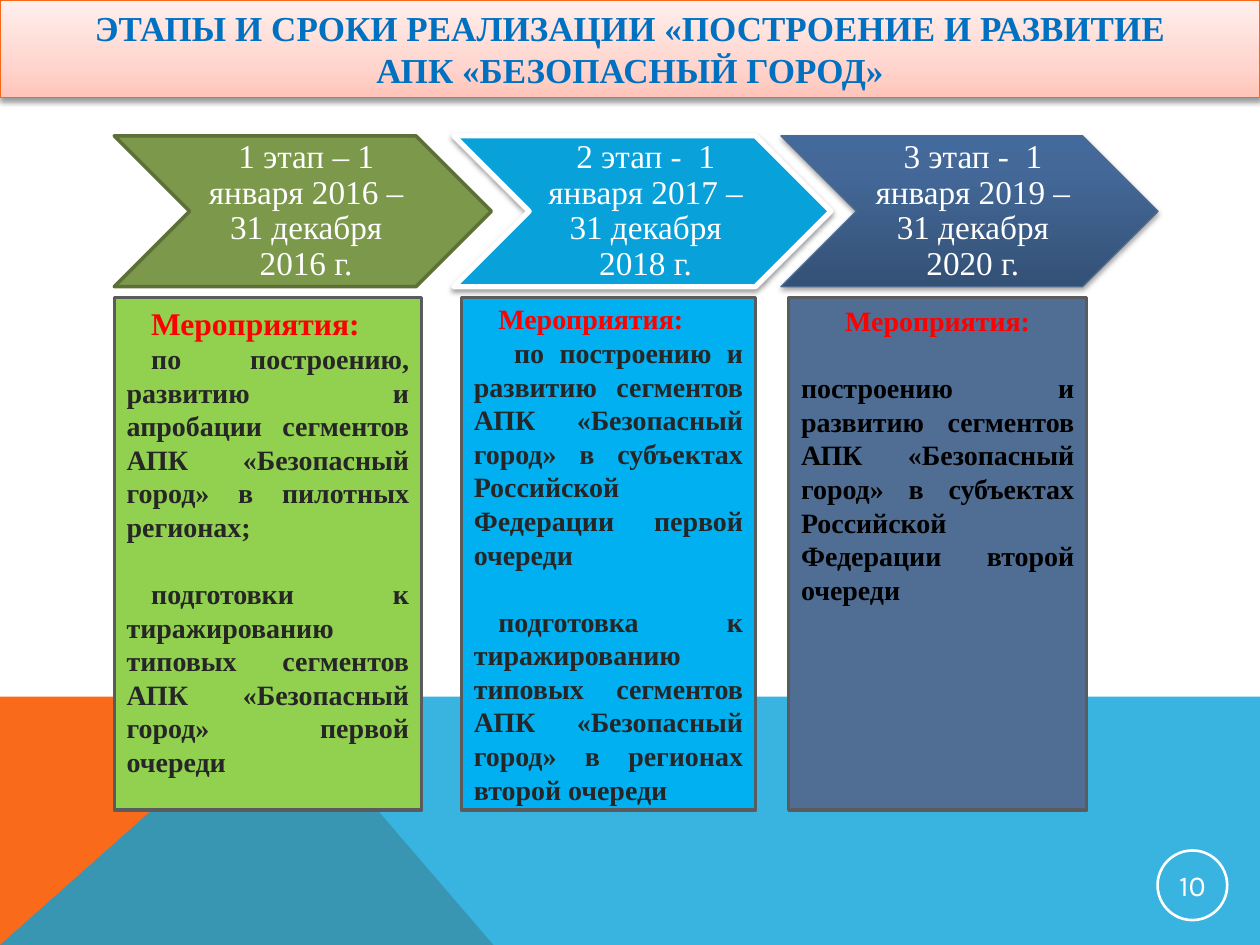
from lxml.etree import SubElement
from pptx import Presentation
from pptx.dml.color import RGBColor
from pptx.enum.shapes import MSO_SHAPE
from pptx.enum.text import MSO_ANCHOR, MSO_AUTO_SIZE, PP_ALIGN
from pptx.oxml.ns import qn
from pptx.util import Pt

SERIF = "Times New Roman"
WIDTH, HEIGHT = 720, 540
BLANK_LINE = 19.2
RED, DARK = "FF0000", "262626"


def color(value):
    return RGBColor.from_string(value)


def add_paragraph(frame, text, size=16, tone="FFFFFF", bold=False, font=SERIF,
                  align=PP_ALIGN.CENTER, indent=0, before=0, line_spacing=None):
    first = not frame.paragraphs[0].runs
    paragraph = frame.paragraphs[0] if first else frame.add_paragraph()
    paragraph.alignment = align
    if line_spacing:
        paragraph.line_spacing = line_spacing
    if before:
        paragraph.space_before = Pt(before)
    if indent:
        properties = paragraph._p.get_or_add_pPr()
        properties.set("marL", "0")
        properties.set("indent", str(Pt(indent)))
    run = paragraph.add_run()
    run.text = text
    run.font.name = font
    run.font.size = Pt(size)
    run.font.bold = bold
    run.font.color.rgb = color(tone)


class SlideBuilder:
    def __init__(self, slide):
        self.slide = slide

    def style(self, shape, fill=None, line=None, line_width=1, shadow=None, alpha=None):
        shape.shadow.inherit = False
        if isinstance(fill, list):
            self.gradient(shape, fill)
        elif fill:
            shape.fill.solid()
            shape.fill.fore_color.rgb = color(fill)
        else:
            shape.fill.background()
        if alpha:
            tone = shape._element.spPr.find(qn("a:solidFill"))[0]
            SubElement(tone, qn("a:alpha"), val=str(alpha * 1000))
        if line:
            shape.line.color.rgb = color(line)
            shape.line.width = Pt(line_width)
        else:
            shape.line.fill.background()
        if shadow:
            effects = shape._element.spPr.find(qn("a:effectLst"))
            outer = SubElement(effects, qn("a:outerShdw"), blurRad=str(Pt(3.1)),
                               dist=str(Pt(1.7)), dir="5400000", rotWithShape="0")
            tone = SubElement(outer, qn("a:srgbClr"), val="000000")
            SubElement(tone, qn("a:alpha"), val=str(shadow * 1000))

    def gradient(self, shape, stops):
        shape.fill.gradient()
        shape.fill.gradient_angle = 90
        stop_list = shape._element.spPr.find(qn("a:gradFill")).find(qn("a:gsLst"))
        for stop in list(stop_list):
            stop_list.remove(stop)
        for position, value in stops:
            stop = SubElement(stop_list, qn("a:gs"), pos=str(position * 1000))
            SubElement(stop, qn("a:srgbClr"), val=value)

    def polygon(self, points, **style):
        builder = self.slide.shapes.build_freeform(*points[0], scale=Pt(1))
        builder.add_line_segments(points[1:], close=True)
        self.style(builder.convert_to_shape(), **style)

    def shape(self, kind, left, top, width, height, anchor=MSO_ANCHOR.TOP, **style):
        shape = self.slide.shapes.add_shape(kind, Pt(left), Pt(top), Pt(width), Pt(height))
        self.style(shape, **style)
        shape.text_frame.vertical_anchor = anchor
        return shape.text_frame

    def text_box(self, left, top, width, height):
        frame = self.slide.shapes.add_textbox(Pt(left), Pt(top), Pt(width), Pt(height)).text_frame
        frame.word_wrap = True
        frame.vertical_anchor = MSO_ANCHOR.MIDDLE
        frame.margin_left = Pt(5.7)
        frame.margin_top = frame.margin_right = frame.margin_bottom = Pt(1.9)
        return frame

    def stage(self, left, text, **style):
        top, width, height = 77.6, 215.5, 86.2
        self.shape(MSO_SHAPE.CHEVRON, left, top, width, height, **style)
        frame = self.text_box(left + height / 2, top, width - height, height)
        add_paragraph(frame, text, size=19, line_spacing=0.9)

    def activities(self, left, width, fill, paragraphs, anchor=MSO_ANCHOR.TOP):
        frame = self.shape(MSO_SHAPE.RECTANGLE, left, 170, width, 293, anchor=anchor,
                           fill=fill, line="5A5B5D", line_width=2)
        for text, options in paragraphs:
            add_paragraph(frame, text, **{"bold": True, "align": PP_ALIGN.JUSTIFY, **options})


def main():
    presentation = Presentation()
    presentation.slide_width, presentation.slide_height = Pt(WIDTH), Pt(HEIGHT)
    builder = SlideBuilder(presentation.slides.add_slide(presentation.slide_layouts[6]))

    horizon, corner = 397.5, 160.5
    builder.polygon([(0, HEIGHT), (0, horizon), (corner, horizon), (281.5, HEIGHT)], fill="F96A1B")
    builder.polygon([(0, HEIGHT), (corner, horizon), (WIDTH, horizon), (WIDTH, HEIGHT)],
                    fill="08A1D9", alpha=80)

    number = builder.shape(MSO_SHAPE.OVAL, 661.5, 486, 39.8, 39.8, anchor=MSO_ANCHOR.MIDDLE,
                           line="FFFFFF", line_width=1.5)
    number.margin_left = number.margin_right = Pt(0.7)
    number.margin_top = number.margin_bottom = Pt(0.7)
    add_paragraph(number, "10", size=16.5, font="Karla")

    title = builder.shape(MSO_SHAPE.RECTANGLE, 0, 0, WIDTH, 55.7,
                          fill=[(0, "FFC5BA"), (35, "FFD6CF"), (100, "FFEFED")],
                          line="F96615", line_width=0.75, shadow=38)
    title.auto_size = MSO_AUTO_SIZE.SHAPE_TO_FIT_TEXT
    for text in ("ЭТАПЫ И СРОКИ РЕАЛИЗАЦИИ «ПОСТРОЕНИЕ И РАЗВИТИЕ", "АПК «БЕЗОПАСНЫЙ ГОРОД»"):
        add_paragraph(title, text, size=20, tone="0070C0", bold=True)

    builder.stage(65.3, "1 этап – 1 января 2016 – 31 декабря 2016 г.",
                  fill="7C984A", line="5C7037", line_width=2)
    builder.stage(259.3, "2 этап -  1 января 2017 – 31 декабря 2018 г.",
                  fill="08A1D9", line="FFFFFF", line_width=3, shadow=38)
    builder.stage(446.3, "3 этап -  1 января 2019 – 31 декабря 2020 г.",
                  fill=[(0, "345176"), (80, "446999"), (100, "426A9C")],
                  line="4D6B92", line_width=0.75, shadow=35)

    heading = {"tone": RED, "indent": 14}
    body = {"tone": DARK, "indent": 14}
    separated = {**body, "before": BLANK_LINE}
    builder.activities(65.3, 175.6, "92D050", [
        ("Мероприятия:", {**heading, "size": 18}),
        ("по построению, развитию и апробации сегментов АПК «Безопасный город» "
         "в пилотных регионах;", body),
        ("подготовки к тиражированию типовых сегментов АПК «Безопасный город» "
         "первой очереди", separated),
    ])
    builder.activities(263.7, 168, "00B0F0", [
        ("Мероприятия:", heading),
        ("по построению и развитию сегментов АПК «Безопасный город» в субъектах "
         "Российской Федерации первой очереди", {**body, "indent": 23}),
        ("подготовка к тиражированию типовых сегментов АПК «Безопасный город» "
         "в регионах второй очереди", separated),
    ], anchor=MSO_ANCHOR.MIDDLE)
    builder.activities(450.7, 170.3, "506E94", [
        ("Мероприятия:", {"tone": RED, "align": PP_ALIGN.CENTER}),
        ("построению и развитию сегментов АПК «Безопасный город» в субъектах "
         "Российской Федерации второй очереди", {"tone": "000000", "before": BLANK_LINE}),
    ])

    presentation.save("out.pptx")


if __name__ == "__main__":
    main()
